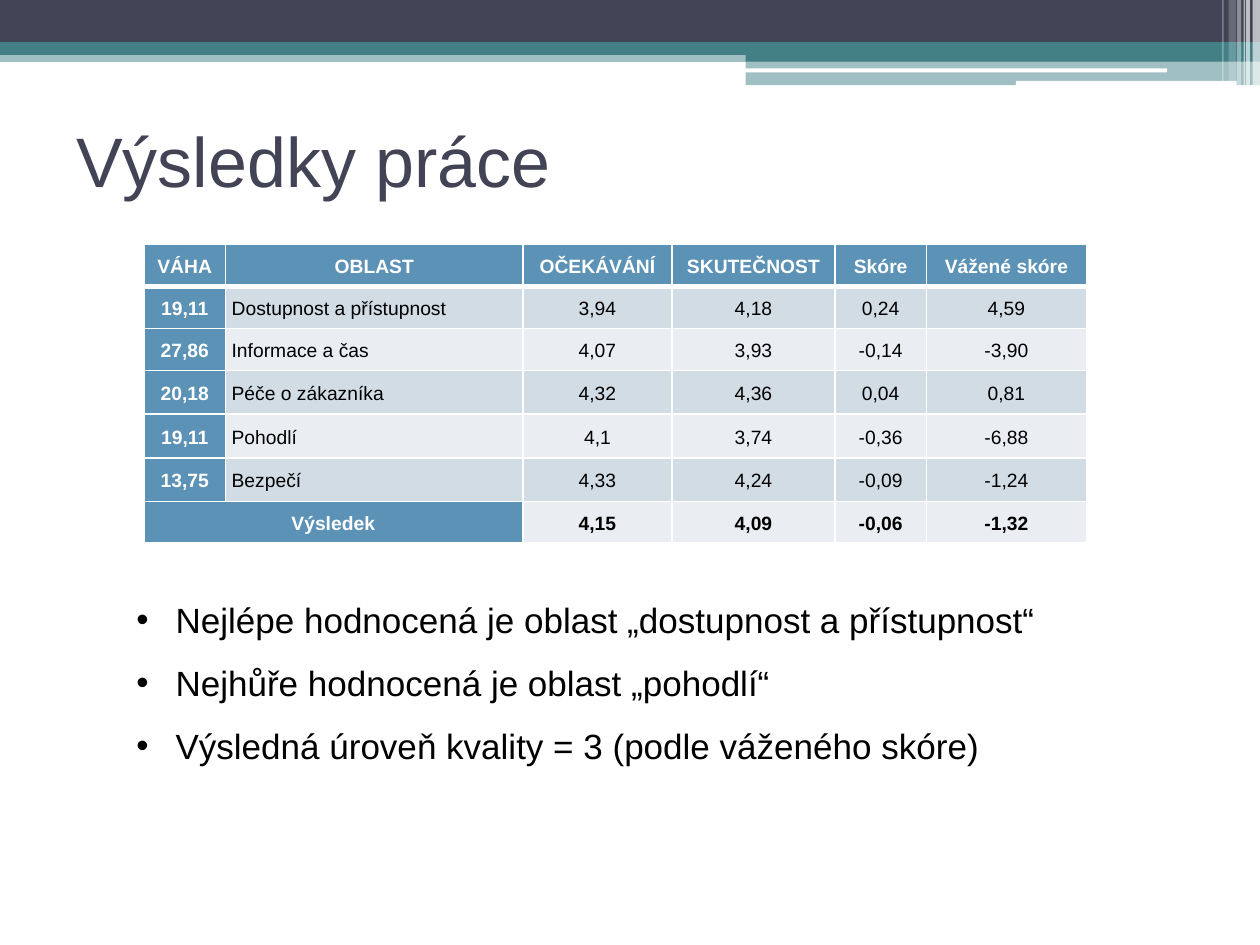
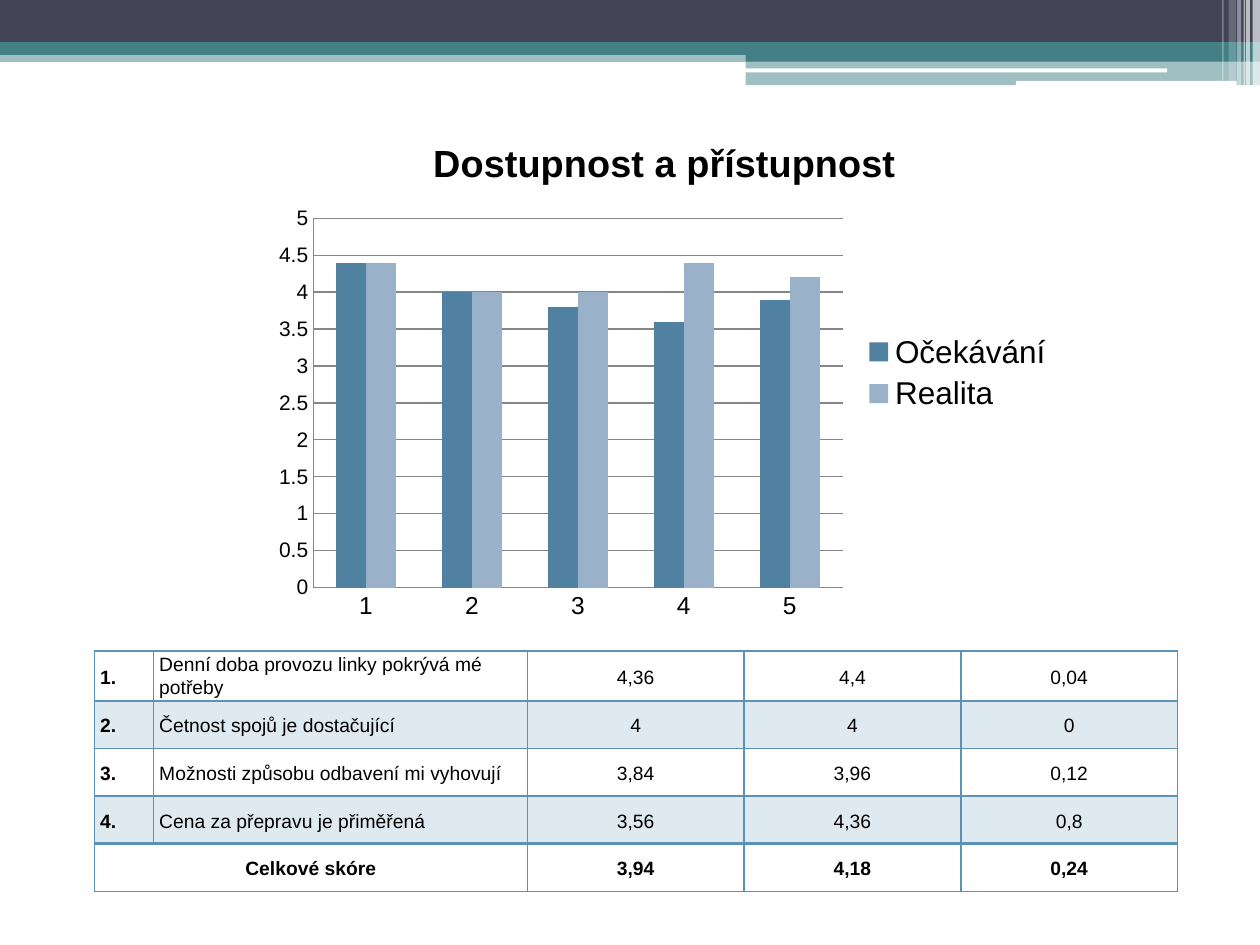
from lxml import etree
from pptx import Presentation
from pptx.chart.data import CategoryChartData
from pptx.dml.color import RGBColor
from pptx.enum.chart import XL_CHART_TYPE, XL_LEGEND_POSITION, XL_TICK_MARK
from pptx.enum.shapes import MSO_SHAPE
from pptx.enum.text import MSO_ANCHOR, MSO_AUTO_SIZE, PP_ALIGN
from pptx.oxml.ns import qn
from pptx.util import Cm, Pt

RECT, ROUNDED = MSO_SHAPE.RECTANGLE, MSO_SHAPE.ROUNDED_RECTANGLE
LEFT, CENTER = PP_ALIGN.LEFT, PP_ALIGN.CENTER
MIDDLE = MSO_ANCHOR.MIDDLE
NO_TICKS = XL_TICK_MARK.NONE
FIT_SHAPE = MSO_AUTO_SIZE.SHAPE_TO_FIT_TEXT
COLUMNS = XL_CHART_TYPE.COLUMN_CLUSTERED
LEGEND_RIGHT = XL_LEGEND_POSITION.RIGHT

FONT = "Arial"
NAVY, TEAL, BLUE = "424456", "438086", "5C92B5"
WHITE, BLACK, GREY = "FFFFFF", "000000", "868686"
STRIPES = ("EAEEF3", "D2DCE5")

# kind, left, top, width, height (cm), colour, opacity in percent
BANDS = [
    (RECT, 0, 1.02, 25.4, 0.23, TEAL, 50),
    (RECT, 0, 0, 25.4, 0.86, NAVY, 100),
    (RECT, 0, 0.85, 25.4, 0.26, TEAL, 100),
    (RECT, 15.03, 0.99, 10.37, 0.25, TEAL, 100),
    (RECT, 15.03, 1.22, 10.37, 0.5, TEAL, 50),
    (ROUNDED, 15.01, 1.38, 8.52, 0.08, WHITE, 100),
    (ROUNDED, 20.48, 1.63, 4.45, 0.1, WHITE, 100),
    (RECT, 25.25, 0, 0.15, 1.73, WHITE, 65),
    (RECT, 25.12, 0, 0.08, 1.73, WHITE, 65),
    (RECT, 25.07, 0, 0.03, 1.73, WHITE, 60),
    (RECT, 24.94, 0, 0.08, 1.73, WHITE, 40),
    (RECT, 24.77, 0, 0.15, 1.63, WHITE, 20),
    (RECT, 24.64, 0, 0.03, 1.63, WHITE, 30),
]

RESULTS_TITLE = "Výsledky práce"
RESULTS = [
    ("VÁHA", "OBLAST", "OČEKÁVÁNÍ", "SKUTEČNOST", "Skóre", "Vážené skóre"),
    ("19,11", "Dostupnost a přístupnost", "3,94", "4,18", "0,24", "4,59"),
    ("27,86", "Informace a čas", "4,07", "3,93", "-0,14", "-3,90"),
    ("20,18", "Péče o zákazníka", "4,32", "4,36", "0,04", "0,81"),
    ("19,11", "Pohodlí", "4,1", "3,74", "-0,36", "-6,88"),
    ("13,75", "Bezpečí", "4,33", "4,24", "-0,09", "-1,24"),
    ("Výsledek", "", "4,15", "4,09", "-0,06", "-1,32"),
]
RESULTS_COLUMNS = (1.65, 5.99, 3.01, 3.28, 1.85, 3.22)
RESULTS_ROWS = (0.84, 0.85, 0.85, 0.88, 0.88, 0.88, 0.84)
FINDINGS = [
    "Nejlépe hodnocená je oblast „dostupnost a přístupnost“",
    "Nejhůře hodnocená je oblast „pohodlí“",
    "Výsledná úroveň kvality = 3 (podle váženého skóre)",
]

ACCESS_TITLE = "Dostupnost a přístupnost"
ACCESS = [
    ("1.", "Denní doba provozu linky pokrývá mé potřeby", "4,36", "4,4", "0,04"),
    ("2.", "Četnost spojů je dostačující", "4", "4", "0"),
    ("3.", "Možnosti způsobu odbavení mi vyhovují", "3,84", "3,96", "0,12"),
    ("4.", "Cena za přepravu je přiměřená", "3,56", "4,36", "0,8"),
    ("Celkové skóre", "", "3,94", "4,18", "0,24"),
]
ACCESS_COLUMNS = (1.19, 7.54, 4.37, 4.37, 4.37)
ACCESS_ROWS = (0.96,) * len(ACCESS)
# name, values, colour
ACCESS_SERIES = [
    ("Očekávání", (4.4, 4, 3.8, 3.6, 3.9), "5081A1"),
    ("Realita", (4.4, 4, 4, 4.4, 4.2), "99B1C9"),
]

LINE_SPACING = 1.15
WRAPPED_SPACING = 1.08  # keeps a two-line label within its row
WRAP_LENGTH = 40


def rgb(value):
    return RGBColor.from_string(value)


def paint(fill, color):
    fill.solid()
    fill.fore_color.rgb = rgb(color)


def set_opacity(properties, opacity):
    """Add transparency to the solid fill directly below the given properties."""
    color = properties.find(qn("a:solidFill"))[0]
    etree.SubElement(color, qn("a:alpha"), val=str(opacity * 1000))


def style_font(font, size, color=BLACK, bold=False):
    font.name, font.size, font.bold = FONT, Pt(size), bold
    font.color.rgb = rgb(color)


def add_master_bands(master, slide):
    """Draw the bands on the slide, then move them behind the master's placeholders."""
    for index, (kind, left, top, width, height, color, opacity) in enumerate(BANDS):
        band = slide.shapes.add_shape(kind, Cm(left), Cm(top), Cm(width), Cm(height))
        band.shadow.inherit = False
        band.line.fill.background()
        paint(band.fill, color)
        if opacity < 100:
            set_opacity(band.element.spPr, opacity)
        band.element.nvSpPr.cNvPr.set("id", str(100 + index))
        master.shapes.element.insert(2 + index, band.element)


def set_borders(cell, color, top=1, bottom=1):
    widths = {"a:lnL": 1, "a:lnR": 1, "a:lnT": top, "a:lnB": bottom}
    properties = cell._tc.get_or_add_tcPr()
    for index, (side, width) in enumerate(widths.items()):
        line = etree.Element(qn(side), w=str(Pt(width)))
        fill = etree.SubElement(line, qn("a:solidFill"))
        etree.SubElement(fill, qn("a:srgbClr"), val=color)
        properties.insert(index, line)


def add_score_table(slide, left, top, rows, widths, heights, style_cell):
    """Add a table whose last row has its first two cells merged."""
    table = slide.shapes.add_table(len(rows), len(widths), Cm(left), Cm(top),
                                   Cm(sum(widths)), Cm(sum(heights))).table
    table.first_row = table.horz_banding = False
    for column, width in zip(table.columns, widths):
        column.width = Cm(width)
    for row, height in zip(table.rows, heights):
        row.height = Cm(height)
    last = len(rows) - 1
    table.cell(last, 0).merge(table.cell(last, 1))
    for r, row in enumerate(rows):
        for c, content in enumerate(row):
            cell = table.cell(r, c)
            cell.vertical_anchor = MIDDLE
            cell.margin_left = cell.margin_right = Cm(0.12)
            cell.margin_top = cell.margin_bottom = 0
            color, bold, align = style_cell(cell, r, c, last)
            if cell.is_spanned:
                continue
            cell.text_frame.text = content
            paragraph = cell.text_frame.paragraphs[0]
            paragraph.alignment = align
            wraps = len(content) > WRAP_LENGTH
            paragraph.line_spacing = WRAPPED_SPACING if wraps else LINE_SPACING
            style_font(paragraph.runs[0].font, 11, color, bold)


def style_result(cell, r, c, last):
    heading = r == 0 or c == 0 or (r == last and c == 1)
    paint(cell.fill, BLUE if heading else STRIPES[r % 2])
    set_borders(cell, WHITE, top=3 if r == 1 else 1, bottom=3 if r == 0 else 1)
    align = LEFT if c == 1 and 0 < r < last else CENTER
    return WHITE if heading else BLACK, heading or r == last, align


def style_access(cell, r, c, last):
    if r % 2:
        paint(cell.fill, BLUE)
        set_opacity(cell._tc.get_or_add_tcPr(), 20)
    else:
        cell.fill.background()
    set_borders(cell, BLUE, top=2.25 if r == last else 1,
                bottom=2.25 if r == last - 1 else 1)
    align = LEFT if c < 2 and r < last else CENTER
    return BLACK, c == 0 or r == last, align


def add_title(slide, text):
    title = slide.shapes.title
    title.left, title.top, title.width, title.height = Cm(1.28), Cm(1.73), Cm(22.86), Cm(2.97)
    title.text_frame.text = text
    title.text_frame.vertical_anchor = MIDDLE
    paragraph = title.text_frame.paragraphs[0]
    paragraph.alignment = LEFT
    style_font(paragraph.runs[0].font, 40, NAVY)


def add_findings(slide):
    frame = slide.shapes.add_textbox(Cm(2.5), Cm(11.51), Cm(20.8), Cm(4.11)).text_frame
    frame.word_wrap = True
    frame.auto_size = FIT_SHAPE
    frame.text = "\n".join(FINDINGS)
    for paragraph in frame.paragraphs:
        paragraph.line_spacing = 1.5
        style_font(paragraph.runs[0].font, 20)
        properties = paragraph._p.get_or_add_pPr()
        properties.set("marL", str(Cm(0.79)))
        properties.set("indent", str(-Cm(0.79)))
        etree.SubElement(properties, qn("a:buFont"), typeface=FONT)
        etree.SubElement(properties, qn("a:buChar"), char="•")


def add_access_chart(slide):
    data = CategoryChartData()
    data.categories = [str(number) for number in range(1, len(ACCESS) + 1)]
    for name, scores, _ in ACCESS_SERIES:
        data.add_series(name, scores)
    chart = slide.shapes.add_chart(COLUMNS, Cm(5.3), Cm(2.32), Cm(16.2), Cm(10.39), data).chart
    style_font(chart.font, 18)
    chart.has_title = True
    chart.chart_title.text_frame.text = ACCESS_TITLE
    style_font(chart.chart_title.text_frame.paragraphs[0].runs[0].font, 21.6, bold=True)
    chart.chart_title.include_in_layout = False
    chart.has_legend = True
    chart.legend.position = LEGEND_RIGHT
    chart.legend.include_in_layout = False
    style_font(chart.legend.font, 18)

    plot = chart.plots[0]
    plot.gap_width, plot.overlap, plot.vary_by_categories = 150, 0, False
    for series, (_, _, color) in zip(plot.series, ACCESS_SERIES):
        paint(series.format.fill, color)

    score_axis = chart.value_axis
    score_axis.minimum_scale, score_axis.maximum_scale, score_axis.major_unit = 0, 5, 0.5
    score_axis.has_major_gridlines = True
    score_axis.major_gridlines.format.line.color.rgb = rgb(GREY)
    for axis, size in ((chart.category_axis, 14), (score_axis, 12)):
        axis.major_tick_mark = axis.minor_tick_mark = NO_TICKS
        axis.format.line.color.rgb = rgb(GREY)
        style_font(axis.tick_labels.font, size)


def main():
    deck = Presentation()
    deck.slide_width, deck.slide_height = Cm(25.4), Cm(19.05)
    title_only, blank = deck.slide_layouts[5], deck.slide_layouts[6]

    results = deck.slides.add_slide(title_only)
    add_master_bands(deck.slide_master, results)
    add_title(results, RESULTS_TITLE)
    add_score_table(results, 2.9, 4.93, RESULTS, RESULTS_COLUMNS, RESULTS_ROWS, style_result)
    add_findings(results)

    access = deck.slides.add_slide(blank)
    add_access_chart(access)
    add_score_table(access, 1.9, 13.12, ACCESS, ACCESS_COLUMNS, ACCESS_ROWS, style_access)

    deck.save("out.pptx")


if __name__ == "__main__":
    main()
